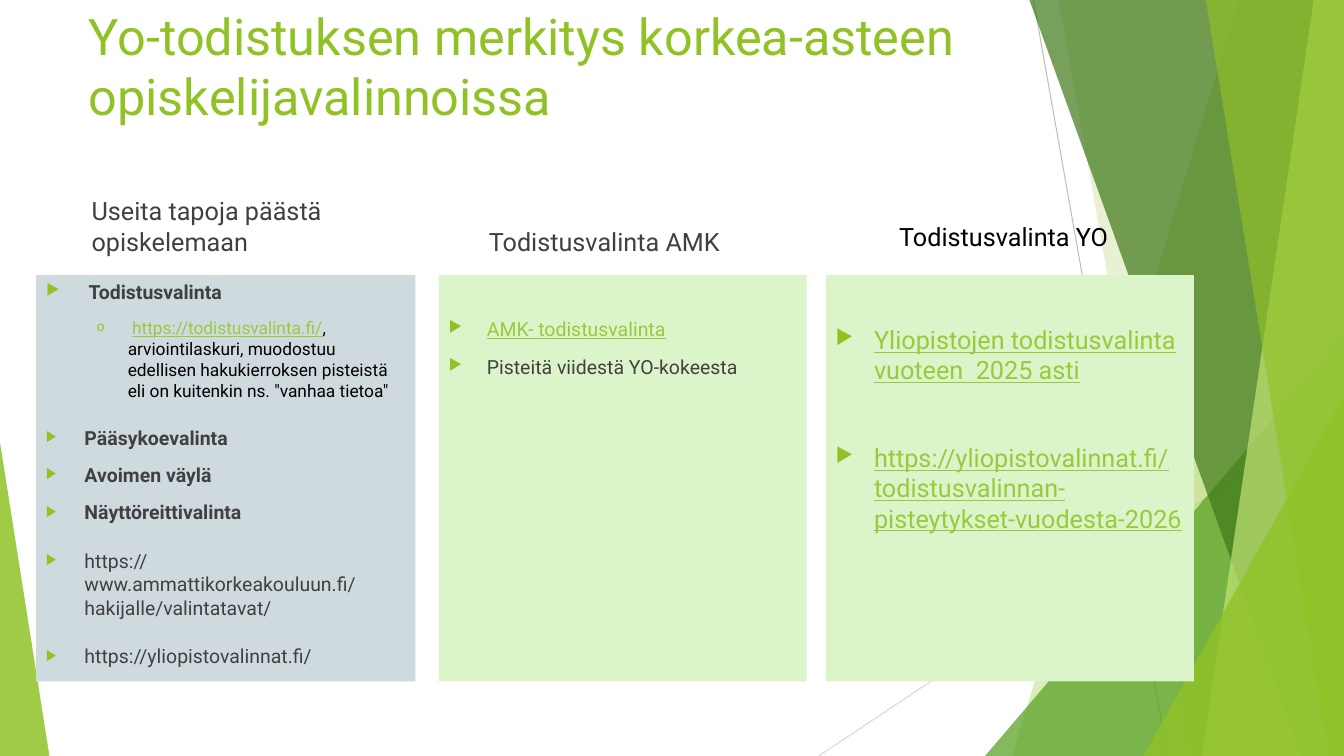
import pptx
import pptx.util
import pptx.dml.color
import pptx.enum.shapes
import pptx.enum.text
import pptx.oxml.ns
import lxml.etree

Inches = pptx.util.Inches
Pt = pptx.util.Pt
RGB = pptx.dml.color.RGBColor
Shape = pptx.enum.shapes.MSO_SHAPE
Anchor = pptx.enum.text.MSO_ANCHOR
Align = pptx.enum.text.PP_ALIGN

LIME = RGB(0x90, 0xC2, 0x26)
GREEN = RGB(0x54, 0xA0, 0x21)
FOREST = RGB(0x3F, 0x78, 0x19)
PALE = RGB(0xC0, 0xE4, 0x74)
LINK = RGB(0x99, 0xCA, 0x3C)
MINT = RGB(0xDB, 0xF4, 0xCA)
MIST = RGB(0xCF, 0xDA, 0xDF)
GREY = RGB(0x40, 0x40, 0x40)
BLACK = RGB(0, 0, 0)
SILVER = RGB(0xBF, 0xBF, 0xBF)
ASH = RGB(0xD9, 0xD9, 0xD9)
FONT = "Roboto"
WIDE, HIGH = 13.33, 7.5
GAP, BREAK = 10, 18


def node(parent, tag, **attrs):
    item = lxml.etree.SubElement(parent, pptx.oxml.ns.qn(tag))
    for key, value in attrs.items():
        item.set(key, str(value))
    return item


def paint(shape, color, alpha=100):
    shape.shadow.inherit = False
    shape.line.fill.background()
    shape.fill.solid()
    shape.fill.fore_color.rgb = color
    if alpha < 100:
        tint = shape.fill._xPr.find(".//" + pptx.oxml.ns.qn("a:srgbClr"))
        node(tint, "a:alpha", val=alpha * 1000)


def style(run, size, color, bold=False, under=False):
    font = run.font
    font.name, font.size, font.bold, font.underline = FONT, Pt(size), bold, under
    font.color.rgb = color


def bullet(para, mark, left, hang):
    props = para._p.get_or_add_pPr()
    props.set("marL", str(Inches(left)))
    props.set("indent", str(-Inches(hang)))
    node(node(props, "a:buClr"), "a:srgbClr", val=LIME)
    node(props, "a:buSzPct", val=80000)
    if mark == "o":
        node(props, "a:buFont", typeface="Courier New")
    node(props, "a:buChar", char=mark)


def ray(slide, start, end, color):
    line = slide.shapes.add_connector(
        pptx.enum.shapes.MSO_CONNECTOR.STRAIGHT, *map(Inches, start + end))
    line.line.color.rgb = color
    line.line.width = Pt(0.75)
    node(line._element.spPr, "a:effectLst")


def band(slide, top, foot, color, alpha):
    pen = slide.shapes.build_freeform(Inches(top), 0)
    pen.add_line_segments(
        [(Inches(x), Inches(y)) for x, y in ((WIDE, 0), (WIDE, HIGH), (foot, HIGH))])
    paint(pen.convert_to_shape(), color, alpha)


def wedge(slide, left, top, width, tip, color, alpha):
    shape = slide.shapes.add_shape(
        Shape.ISOSCELES_TRIANGLE, *map(Inches, (left, top, width, HIGH - top)))
    shape.adjustments[0] = tip
    paint(shape, color, alpha)


def scenery(slide):
    ray(slide, (10.25, 0), (11.58, HIGH), SILVER)
    ray(slide, (WIDE, 4.03), (8.12, HIGH), ASH)
    band(slide, 12.28, 10.04, LIME, 30)
    band(slide, 10.5, 11.83, LIME, 20)
    wedge(slide, 9.77, 3.33, 3.56, 1, GREEN, 72)
    band(slide, 10.21, 12.91, FOREST, 70)
    band(slide, 13.03, 11.92, PALE, 70)
    band(slide, 11.96, 13.18, LIME, 65)
    wedge(slide, 11.34, 3.93, 1.99, 1, LIME, 80)
    wedge(slide, 0, 4.39, 0.49, 0, LIME, 85)


def headline(slide, box, words):
    title = slide.shapes.title
    title.left, title.top, title.width, title.height = map(Inches, box)
    frame = title.text_frame
    frame.text = words
    frame.word_wrap = True
    frame.auto_size = pptx.enum.text.MSO_AUTO_SIZE.NONE
    frame.vertical_anchor = Anchor.TOP
    frame.paragraphs[0].alignment = Align.LEFT
    style(frame.paragraphs[0].runs[0], 36, LIME)


def heading(slide, box, words, color):
    frame = slide.shapes.add_textbox(*map(Inches, box)).text_frame
    frame.text = words
    frame.word_wrap = True
    frame.vertical_anchor = Anchor.BOTTOM
    style(frame.paragraphs[0].runs[0], 18, color)


def panel(slide, box, color, inset, items):
    shape = slide.shapes.add_shape(Shape.RECTANGLE, *map(Inches, box))
    paint(shape, color)
    frame = shape.text_frame
    frame.word_wrap = True
    frame.vertical_anchor = Anchor.TOP
    frame.margin_top = Inches(inset)
    for index, (mark, left, hang, before, parts) in enumerate(items):
        para = frame.add_paragraph() if index else frame.paragraphs[0]
        para.alignment = Align.LEFT
        para.space_before = Pt(before if index else 0)
        bullet(para, mark, left, hang)
        for words, *look in parts:
            run = para.add_run()
            run.text = words
            style(run, *look)


def point(words, before=GAP, size=13.9, color=GREY, bold=False, under=False):
    return "▶", 0.38, 0.38, before, [(words, size, color, bold, under)]


def columns(slide, top, height):
    detail = ("o", 0.81, 0.31, GAP, [
        (" ", 12.4, BLACK),
        ("https://todistusvalinta.fi/", 12.4, LINK, False, True),
        (", arviointilaskuri, muodostuu edellisen hakukierroksen pisteistä "
         "eli on kuitenkin ns. \"vanhaa tietoa\"", 12.4, BLACK)])
    heading(slide, (0.81, top - 1.03, 3.22, 0.89), "Useita tapoja päästä opiskelemaan", GREY)
    panel(slide, (0.36, top, 3.76, height), MIST, 0.05, [
        point(" Todistusvalinta", bold=True),
        detail,
        point("Pääsykoevalinta", BREAK, bold=True),
        point("Avoimen väylä", bold=True),
        point("Näyttöreittivalinta", bold=True),
        point("https://www.ammattikorkeakouluun.fi/hakijalle/valintatavat/", BREAK),
        point("https://yliopistovalinnat.fi/", BREAK)])
    heading(slide, (4.75, top - 1.03, 3.05, 0.89), "Todistusvalinta AMK", GREY)
    panel(slide, (4.35, top, 3.65, height), MINT, 0.42, [
        point("AMK- todistusvalinta", color=LINK, under=True),
        point("Pisteitä viidestä YO-kokeesta")])
    heading(slide, (8.82, top - 0.58, 3.83, 0.4), "Todistusvalinta YO", BLACK)
    panel(slide, (8.19, top, 3.65, height), MINT, 0.49, [
        point("Yliopistojen todistusvalinta vuoteen  2025 asti", GAP, 18, LINK, under=True),
        point("https://yliopistovalinnat.fi/todistusvalinnan-pisteytykset-vuodesta-2026",
              41, 18, LINK, under=True)])


def main():
    deck = pptx.Presentation()
    deck.slide_width, deck.slide_height = Inches(WIDE), Inches(HIGH)
    slide = deck.slides.add_slide(deck.slide_layouts[5])
    scenery(slide)
    headline(slide, (0.78, 0, 9.4, 1.44),
             "Yo-todistuksen merkitys korkea-asteen opiskelijavalinnoissa")
    columns(slide, 2.73, 4.03)
    deck.save("out.pptx")


if __name__ == "__main__":
    main()
